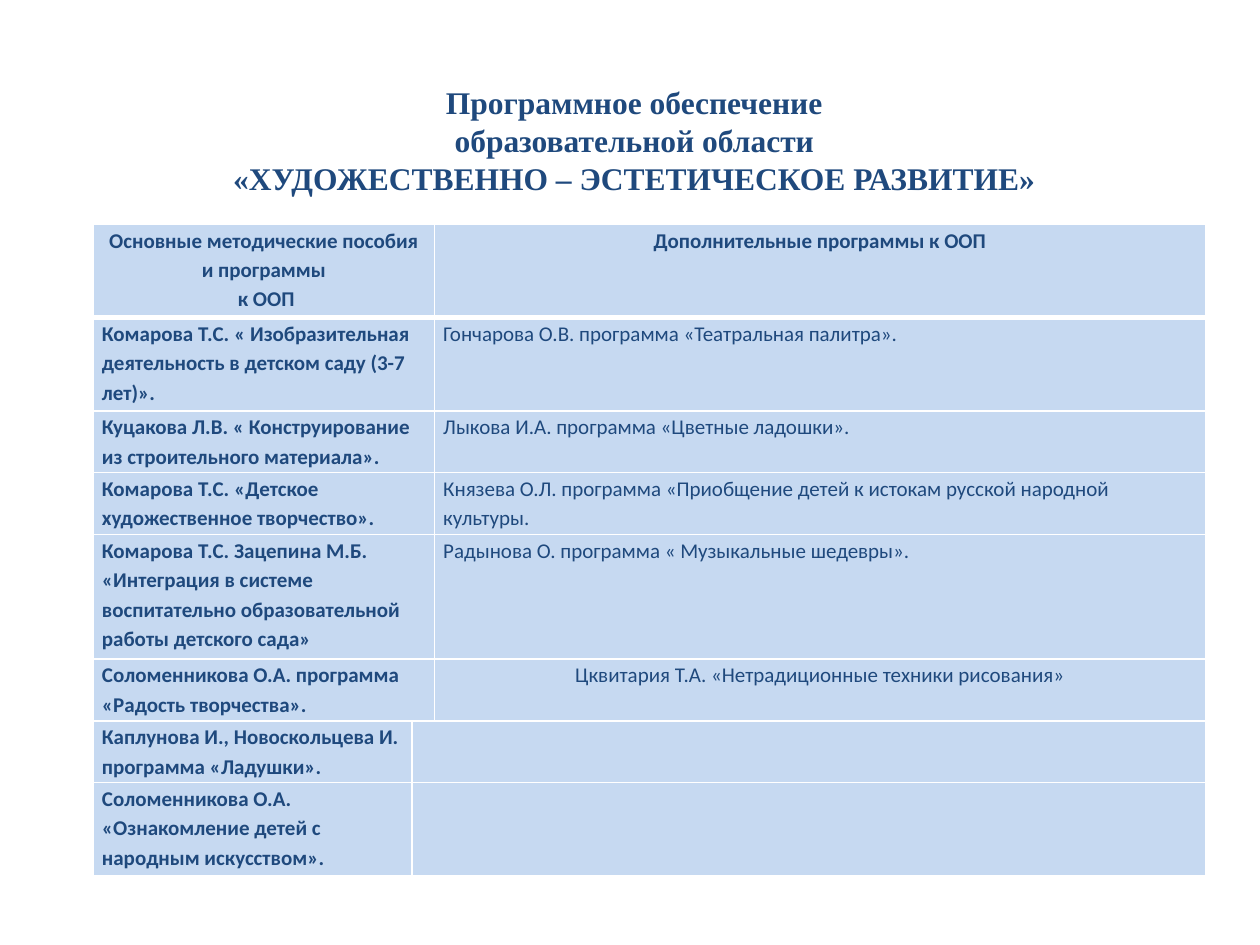
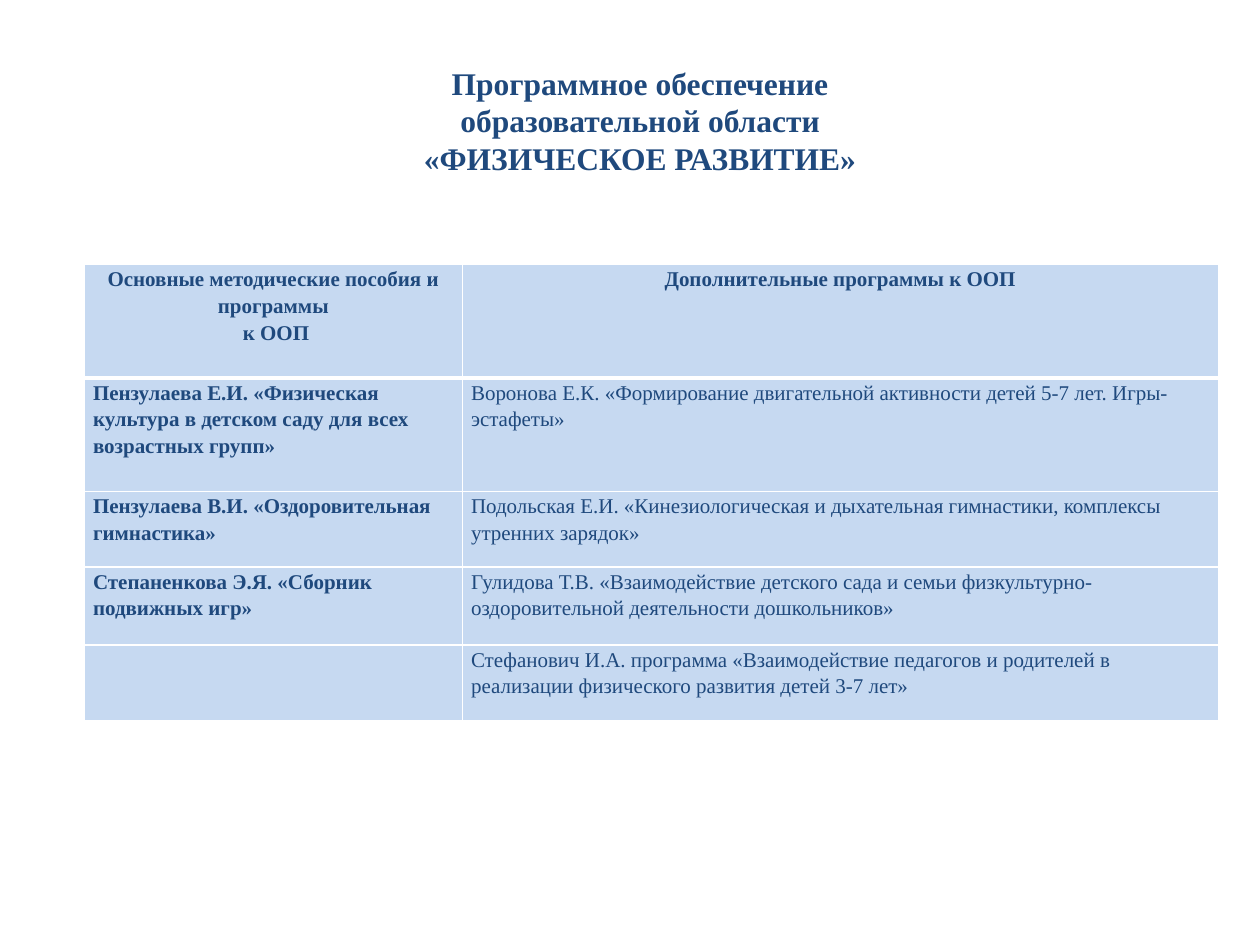
import pptx
import pptx.util
import pptx.dml.color
import pptx.enum.text
import pptx.oxml.ns
import lxml.etree

Pt = pptx.util.Pt
CENTER = pptx.enum.text.PP_ALIGN.CENTER
LEFT = pptx.enum.text.PP_ALIGN.LEFT

COLORS = {"text": "1F497D", "cell": "C6D9F1", "border": "FFFFFF"}
SERIF = "Times New Roman"
HEADER = (
    ["Основные методические пособия и программы", " к ООП"],
    ["Дополнительные программы к ООП"],
)
TITLE_START = ["Программное обеспечение", "образовательной области"]

ART = {
    "title": "«ХУДОЖЕСТВЕННО – ЭСТЕТИЧЕСКОЕ РАЗВИТИЕ»",
    "title_box": (36, 43.2, 653, 94.3),
    "title_bottom": 24.3,
    "table_at": (53.3, 128.2),
    "font": "Calibri",
    "columns": (182.2, 7.2, 440.6),
    "heights": (53.3, 53.3, 35.3, 35.3, 71.3, 35.3, 35.3, 53.3),
    "split_rows": (6, 7),
    "centered": ("Цквитария Т.А. «Нетрадиционные техники рисования»",),
    "rows": [
        ("Комарова Т.С. « Изобразительная деятельность в детском саду (3-7 лет)».",
         "Гончарова О.В. программа «Театральная палитра»."),
        ("Куцакова Л.В. « Конструирование из строительного материала».",
         "Лыкова И.А. программа «Цветные ладошки»."),
        ("Комарова Т.С. «Детское художественное творчество».",
         "Князева О.Л. программа «Приобщение детей к истокам русской народной культуры."),
        ("Комарова Т.С. Зацепина М.Б. «Интеграция в системе воспитательно образовательной работы детского сада»",
         "Радынова О. программа « Музыкальные шедевры»."),
        ("Соломенникова О.А. программа «Радость творчества».",
         "Цквитария Т.А. «Нетрадиционные техники рисования»"),
        ("Каплунова И., Новоскольцева И. программа «Ладушки».", ""),
        ("Соломенникова О.А. «Ознакомление детей с народным искусством».", ""),
    ],
}

SPORT = {
    "title": "«ФИЗИЧЕСКОЕ РАЗВИТИЕ»",
    "title_box": (59.8, 32.4, 612, 72.7),
    "title_bottom": 3.6,
    "table_at": (48.2, 151.2),
    "font": SERIF,
    "columns": (216, 432),
    "heights": (64.8, 64.8, 43.2, 44.6, 43.2),
    "split_rows": (),
    "centered": (),
    "rows": [
        ("Пензулаева Е.И. «Физическая культура в детском саду для всех возрастных групп»",
         "Воронова Е.К. «Формирование двигательной активности детей 5-7 лет. Игры-эстафеты»"),
        ("Пензулаева В.И. «Оздоровительная гимнастика»",
         "Подольская Е.И. «Кинезиологическая и дыхательная гимнастики, комплексы утренних зарядок»"),
        ("Степаненкова Э.Я. «Сборник подвижных игр»",
         "Гулидова Т.В. «Взаимодействие детского сада и семьи физкультурно-оздоровительной деятельности дошкольников»"),
        ("",
         "Стефанович И.А. программа «Взаимодействие педагогов и родителей в реализации физического развития детей 3-7 лет»"),
    ],
}


def set_all(target, values):
    for name, value in values.items():
        setattr(target, name, value)


def write_lines(frame, lines, font, paragraph_format):
    for index, line in enumerate(lines):
        paragraph = frame.add_paragraph() if index else frame.paragraphs[0]
        set_all(paragraph, paragraph_format)
        run = paragraph.add_run()
        run.text = line
        set_all(run.font, font)
        run.font.color.rgb = pptx.dml.color.RGBColor.from_string(COLORS["text"])


def add_title(slide, content):
    box = slide.shapes.add_textbox(*map(Pt, content["title_box"]))
    set_all(box.text_frame, {
        "word_wrap": True,
        "vertical_anchor": pptx.enum.text.MSO_ANCHOR.MIDDLE,
        "margin_bottom": Pt(content["title_bottom"]),
    })
    write_lines(box.text_frame, TITLE_START + [content["title"]],
                {"size": Pt(18), "name": SERIF, "bold": True}, {"alignment": CENTER})


def style_cell(cell, row):
    properties = cell._tc.get_or_add_tcPr()
    widths = {"lnL": 1, "lnR": 1, "lnT": 3 if row == 1 else 1, "lnB": 3 if row == 0 else 1}
    for side, width in widths.items():
        line = lxml.etree.SubElement(properties, pptx.oxml.ns.qn("a:" + side), w=str(Pt(width)))
        fill = lxml.etree.SubElement(line, pptx.oxml.ns.qn("a:solidFill"))
        lxml.etree.SubElement(fill, pptx.oxml.ns.qn("a:srgbClr"), val=COLORS["border"])
    cell.fill.solid()
    cell.fill.fore_color.rgb = pptx.dml.color.RGBColor.from_string(COLORS["cell"])
    set_all(cell, {"margin_left": Pt(5), "margin_right": Pt(5), "margin_top": 0, "margin_bottom": 0})


def add_program_table(slide, content):
    columns, heights = content["columns"], content["heights"]
    shape = slide.shapes.add_table(
        len(heights), len(columns), *map(Pt, content["table_at"]), Pt(sum(columns)), Pt(sum(heights)))
    table = shape.table
    table.horz_banding = False
    for column, width in zip(table.columns, columns):
        column.width = Pt(width)
    texts = [HEADER] + [([left], [right]) for left, right in content["rows"]]
    for row, (height, pair) in enumerate(zip(heights, texts)):
        table.rows[row].height = Pt(height)
        for column in range(len(columns)):
            style_cell(table.cell(row, column), row)
        right_start = 1 if row in content["split_rows"] else len(columns) - 1
        spans = ((0, right_start - 1), (right_start, len(columns) - 1))
        for side, ((first, last), lines) in enumerate(zip(spans, pair)):
            cell = table.cell(row, first)
            if last > first:
                cell.merge(table.cell(row, last))
            if not any(lines):
                continue
            centered = row == 0 or lines[0] in content["centered"]
            write_lines(cell.text_frame, lines,
                        {"size": Pt(12), "name": content["font"], "bold": row == 0 or side == 0},
                        {"alignment": CENTER if centered else LEFT, "line_spacing": 1.15})


def main():
    presentation = pptx.Presentation()
    set_all(presentation, {"slide_width": Pt(720), "slide_height": Pt(540)})
    for content in (ART, SPORT):
        slide = presentation.slides.add_slide(presentation.slide_layouts[6])
        add_program_table(slide, content)
        add_title(slide, content)
    presentation.save("out.pptx")


if __name__ == "__main__":
    main()
